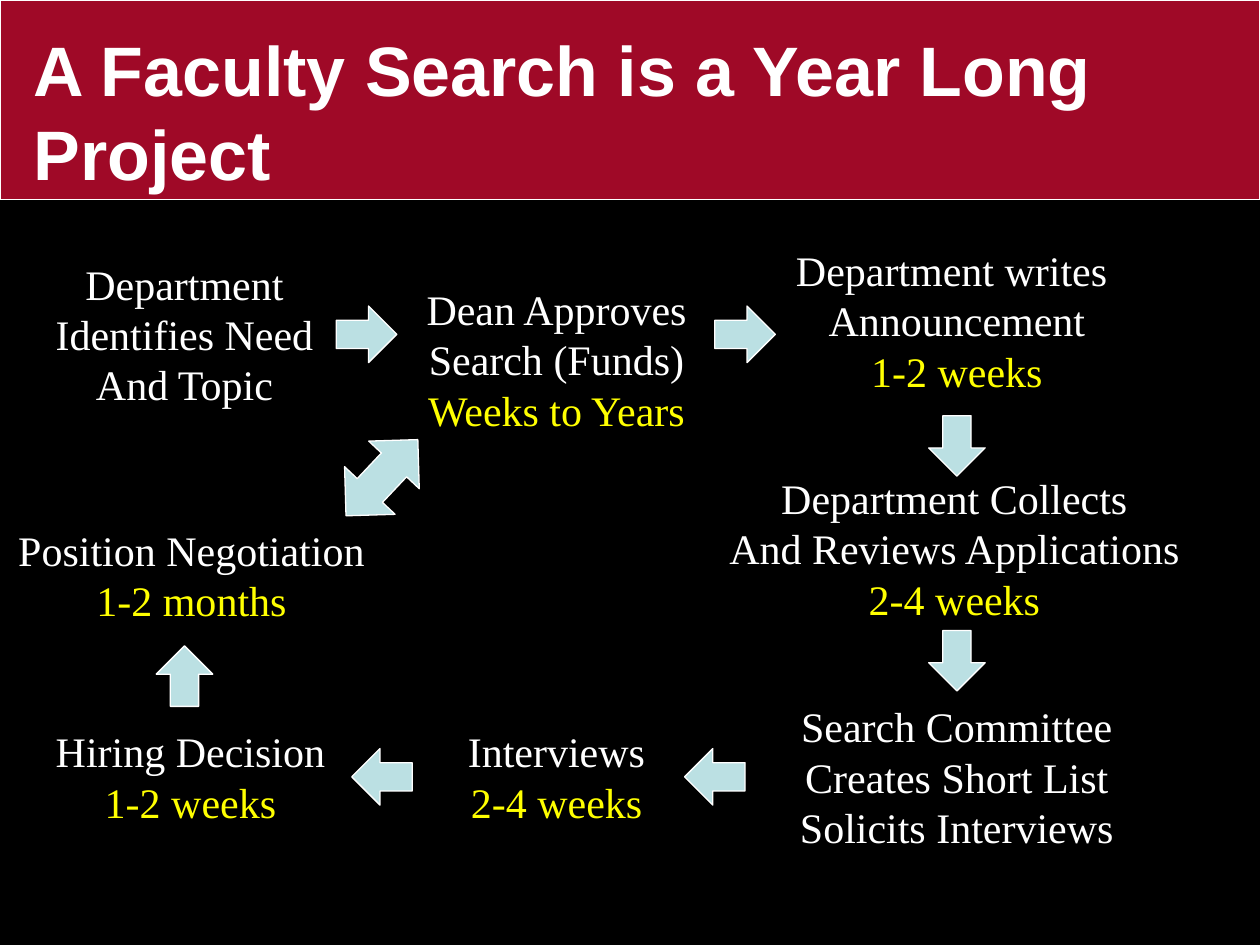
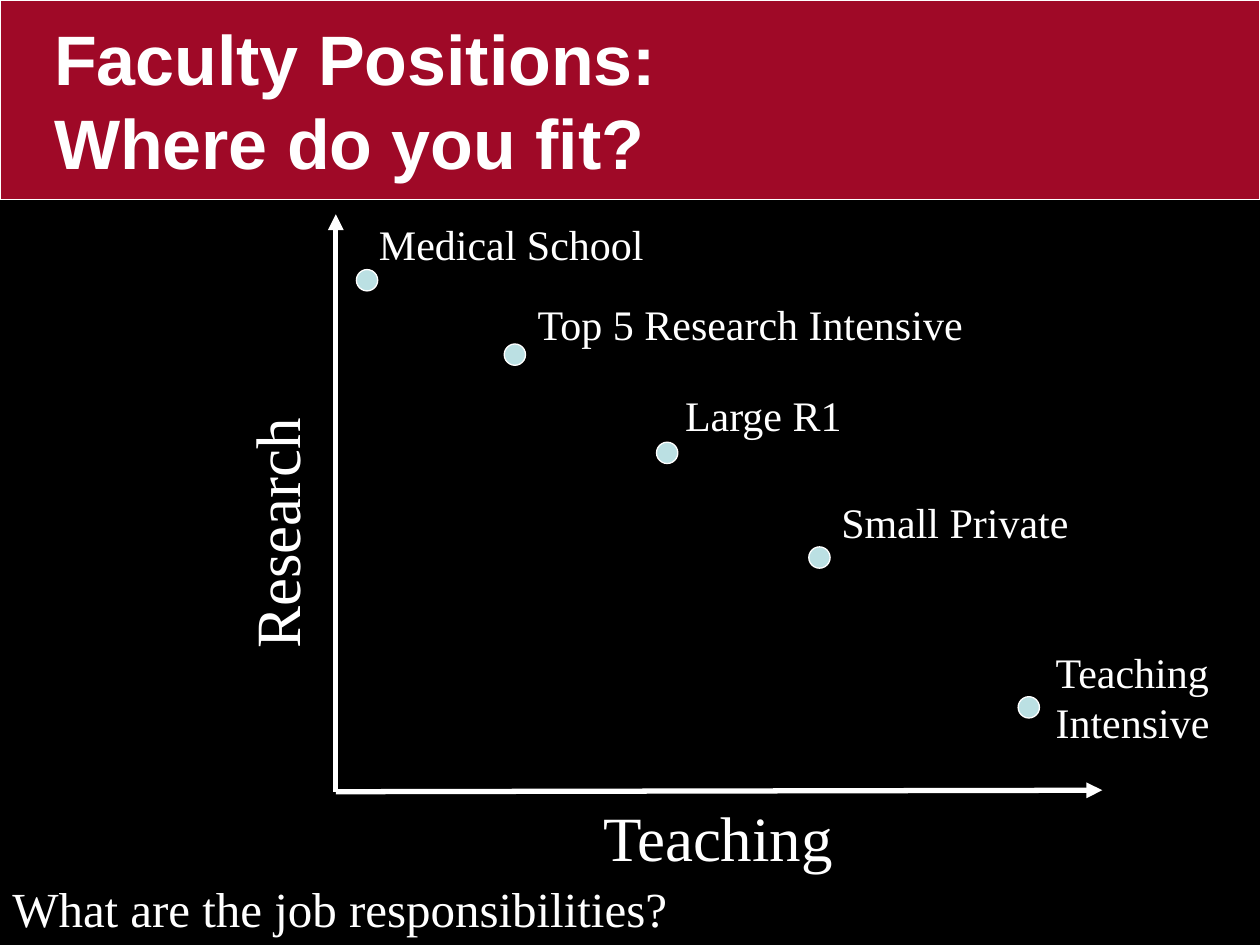
"""Build two slides on faculty searches and faculty positions."""
from lxml.etree import SubElement
from pptx import Presentation
from pptx.dml.color import RGBColor
from pptx.enum.shapes import MSO_CONNECTOR as Link, MSO_SHAPE as Form
from pptx.enum.text import MSO_ANCHOR as Anchor, PP_ALIGN as Align
from pptx.oxml.ns import qn
from pptx.util import Cm, Pt

WIDE, HIGH, BAND = 25.4, 19.05, 4.02
BLACK, WHITE, RED, BLUE, GOLD = "000000", "FFFFFF", "9F0927", "BBE0E3", "FFFF00"
SERIF, SANS = "Times New Roman", "Arial"

SEARCH = "A Faculty Search is a Year Long Project"
STEPS = [
    (3.72, 5.08, 5.77, ["Department", "Identifies Need", "And Topic"], ""),
    (11.22, 5.59, 5.82, ["Dean Approves", "Search (Funds)"], "Weeks to Years"),
    (19.29, 4.8, 7.06, ["Department writes ", "Announcement"], "1-2 weeks"),
    (19.24, 9.4, 9.68, ["Department Collects", "And Reviews Applications"], "2-4 weeks"),
    (19.29, 14, 6.83, ["Search Committee", "Creates Short List", "Solicits Interviews"], ""),
    (11.22, 14.51, 4.11, ["Interviews"], "2-4 weeks"),
    (3.84, 14.51, 5.99, ["Hiring Decision"], "1-2 weeks"),
    (3.86, 10.44, 7.57, ["Position Negotiation"], "1-2 months"),
]
ARROW = (1.22, 1.14)
ARROWS = [
    (7.39, 6.74, 0), (15.02, 6.74, 0),
    (19.29, 8.99, 90), (19.29, 13.32, 90),
    (14.41, 15.66, 180), (7.7, 15.66, 180),
    (3.72, 13.63, 270),
]
SWAP = (7.7, 9.63, 2.11, 1.4, 313.3)

PLACES = "Faculty Positions: \nWhere do you fit?"
ORIGIN, RIGHT, TOP = (6.77, 15.96), (22.22, 15.93), (6.77, 4.32)
DOT = 0.43
DOTS = [
    (7.4, 5.65, 7.39, 4.29, 5.89, ["Medical School"]),
    (10.38, 7.15, 10.59, 5.89, 9.17, ["Top 5 Research Intensive"]),
    (13.45, 9.13, 13.56, 7.72, 3.71, ["Large R1"]),
    (16.52, 11.24, 16.71, 9.88, 5.13, ["Small Private"]),
    (20.74, 14.26, 21.03, 12.9, 3.63, ["Teaching", "Intensive"]),
]
AXES = [(11.91, 15.98, "Teaching", 0), (2.95, 9.83, "Research", 270)]
AXIS = 5.21
QUERY = (0, 17.58, 13.84, ["What are the job responsibilities?"])


def tint(code):
    return RGBColor.from_string(code)


def style(para, size, face=SERIF, color=WHITE, bold=False):
    for run in para.runs:
        font = run.font
        font.size, font.name, font.bold = Pt(size), face, bold
        font.color.rgb = tint(color)


def write(slide, left, top, width, lines, size=24, align=Align.LEFT):
    height = 0.25 + len(lines) * size * 0.0425
    box = slide.shapes.add_textbox(Cm(left), Cm(top), Cm(width), Cm(height))
    frame = box.text_frame
    frame.word_wrap = False
    frame.text = "\n".join(lines)
    for para in frame.paragraphs:
        para.alignment = align
        style(para, size)
    return box


def draw(slide, form, mid, size, fill=BLUE, turn=0):
    (x, y), (w, h) = mid, size
    shape = slide.shapes.add_shape(form, Cm(x - w / 2), Cm(y - h / 2), Cm(w), Cm(h))
    shape.shadow.inherit = False
    shape.fill.solid()
    shape.fill.fore_color.rgb = tint(fill)
    shape.line.color.rgb = tint(WHITE)
    shape.line.width = Pt(0.75)
    shape.rotation = turn


def axis(slide, start, end):
    line = slide.shapes.add_connector(Link.STRAIGHT, *map(Cm, start + end))
    line.line.color.rgb = tint(WHITE)
    line.line.width = Pt(3)
    props = line._element.spPr
    SubElement(props.find(qn("a:ln")), qn("a:tailEnd"), type="triangle")
    SubElement(props, qn("a:effectLst"))


def start(deck, title, left, top, width):
    slide = deck.slides.add_slide(deck.slide_layouts[6])
    draw(slide, Form.RECTANGLE, (WIDE / 2, BAND / 2), (WIDE, BAND), RED)
    box = slide.shapes.add_textbox(Cm(left), Cm(top), Cm(width), Cm(3.18))
    frame = box.text_frame
    frame.word_wrap = True
    frame.vertical_anchor = Anchor.MIDDLE
    frame.text = title
    for para in frame.paragraphs:
        style(para, 40, SANS, bold=True)
    return slide


def search(deck):
    slide = start(deck, SEARCH, 0.43, 0.64, 24.56)
    for x, top, width, lines, time in STEPS:
        text = lines + [time] if time else lines
        box = write(slide, x - width / 2, top, width, text, align=Align.CENTER)
        if time:
            style(box.text_frame.paragraphs[-1], 24, color=GOLD)
    for x, y, turn in ARROWS:
        draw(slide, Form.RIGHT_ARROW, (x, y), ARROW, turn=turn)
    x, y, w, h, turn = SWAP
    draw(slide, Form.LEFT_RIGHT_ARROW, (x, y), (w, h), turn=turn)


def places(deck):
    slide = start(deck, PLACES, 0.84, 0.42, 24.13)
    for end in (RIGHT, TOP):
        axis(slide, ORIGIN, end)
    for left, top, name, turn in AXES:
        write(slide, left, top, AXIS, [name], 36).rotation = turn
    for x, y, left, top, width, lines in DOTS:
        draw(slide, Form.OVAL, (x, y), (DOT, DOT))
        write(slide, left, top, width, lines)
    write(slide, *QUERY, size=28)


def main():
    deck = Presentation()
    deck.slide_width, deck.slide_height = Cm(WIDE), Cm(HIGH)
    back = deck.slide_master.background.fill
    back.solid()
    back.fore_color.rgb = tint(BLACK)
    search(deck)
    places(deck)
    deck.save("out.pptx")


if __name__ == "__main__":
    main()
